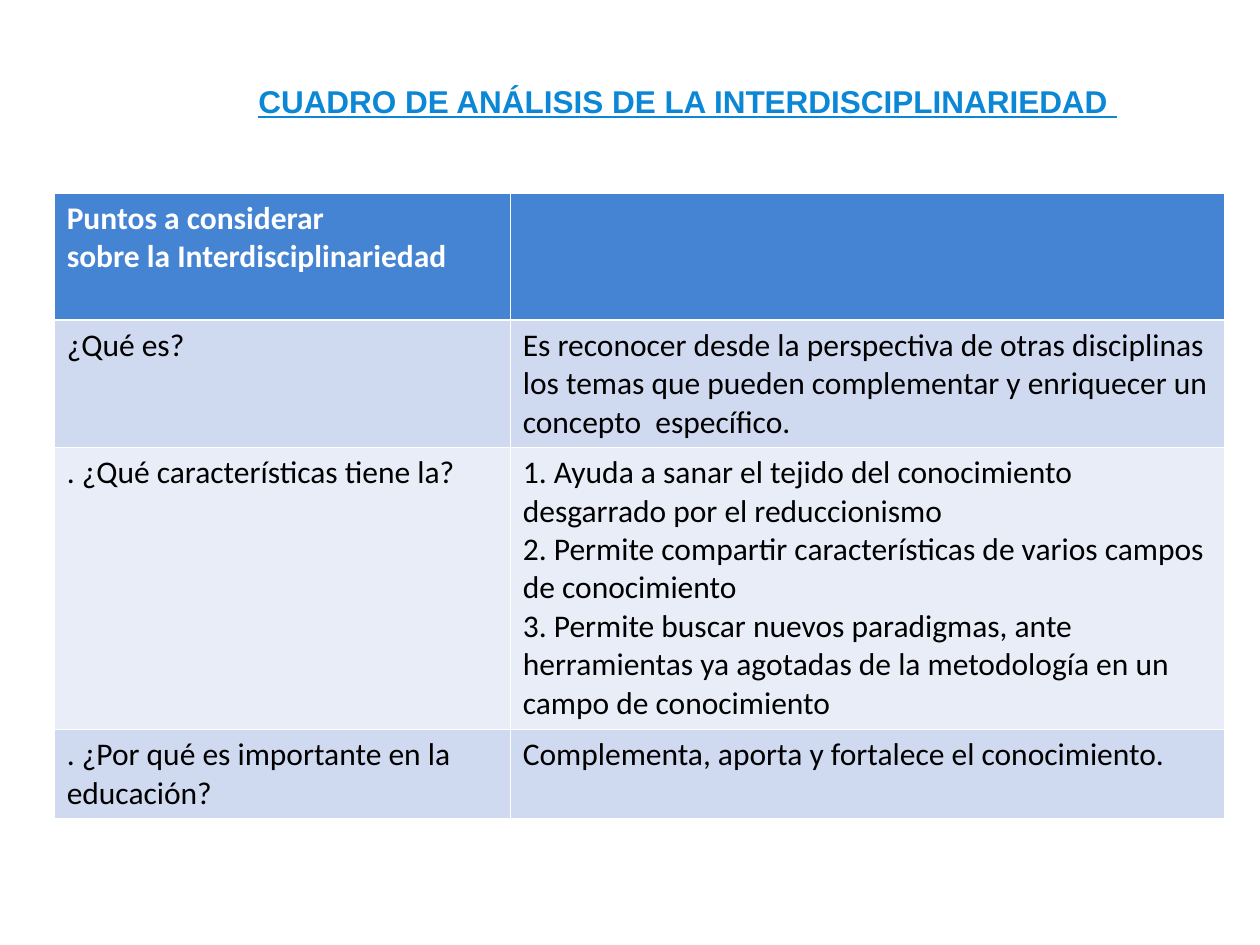
from dataclasses import dataclass

from pptx import Presentation
from pptx.dml.color import RGBColor
from pptx.enum.text import MSO_ANCHOR, MSO_AUTO_SIZE, PP_ALIGN
from pptx.util import Inches, Pt


@dataclass(frozen=True)
class Theme:
    heading: str = "0B87D6"
    header_fill: str = "4584D3"
    header_text: str = "FFFFFF"
    body_text: str = "000000"
    bands: tuple = ("CFD9EF", "E9EDF7")
    heading_font: str = "Arial"
    table_font: str = "Calibri"
    size: int = 18


THEME = Theme()

HEADING = "CUADRO DE ANÁLISIS DE LA INTERDISCIPLINARIEDAD "
ANALYSIS = [
    (["Puntos a considerar", "sobre la Interdisciplinariedad"], []),
    (["¿Qué es?"],
     ["Es reconocer desde la perspectiva de otras disciplinas los temas que "
      "pueden complementar y enriquecer un concepto  específico."]),
    ([". ¿Qué características tiene la?"],
     ["1. Ayuda a sanar el tejido del conocimiento  desgarrado por el reduccionismo",
      "2. Permite compartir características de varios campos de conocimiento",
      "3. Permite buscar nuevos paradigmas, ante herramientas ya agotadas de la "
      "metodología en un campo de conocimiento"]),
    ([". ¿Por qué es importante en la educación?"],
     ["Complementa, aporta y fortalece el conocimiento."]),
]
COLUMN_WIDTHS = (3.62, 5.67)
ROW_HEIGHTS = (1.01, 1.01, 2.24, 0.71)


def write(frame, lines, *, font, color, size=THEME.size, bold=False, underline=False):
    for index, line in enumerate(lines):
        paragraph = frame.paragraphs[0] if index == 0 else frame.add_paragraph()
        paragraph.alignment = PP_ALIGN.LEFT
        run = paragraph.add_run()
        run.text = line
        run.font.name = font
        run.font.size = Pt(size)
        run.font.bold = bold
        run.font.underline = underline
        run.font.color.rgb = RGBColor.from_string(color)


def place_heading(slide, left, top, width, height):
    heading = slide.shapes.title
    heading.left, heading.top = left, top
    heading.width, heading.height = width, height
    frame = heading.text_frame
    frame.word_wrap = False
    frame.auto_size = MSO_AUTO_SIZE.SHAPE_TO_FIT_TEXT
    frame.vertical_anchor = MSO_ANCHOR.TOP
    write(frame, [HEADING], font=THEME.heading_font, color=THEME.heading,
          bold=True, underline=True)


def place_analysis(slide, left, top, width, height):
    analysis = slide.shapes.add_table(
        len(ANALYSIS), len(COLUMN_WIDTHS), left, top, width, height).table
    for column, share in zip(analysis.columns, COLUMN_WIDTHS):
        column.width = int(width * share / sum(COLUMN_WIDTHS))
    for row, share in zip(analysis.rows, ROW_HEIGHTS):
        row.height = int(height * share / sum(ROW_HEIGHTS))
    for index, (row, entries) in enumerate(zip(analysis.rows, ANALYSIS)):
        is_header = index == 0
        fill = THEME.header_fill if is_header else THEME.bands[(index - 1) % 2]
        color = THEME.header_text if is_header else THEME.body_text
        for cell, lines in zip(row.cells, entries):
            cell.fill.solid()
            cell.fill.fore_color.rgb = RGBColor.from_string(fill)
            write(cell.text_frame, lines, font=THEME.table_font, color=color,
                  bold=is_header)


def main():
    deck = Presentation()
    deck.slide_width, deck.slide_height = Inches(10), Inches(7.5)
    slide = deck.slides.add_slide(deck.slide_layouts.get_by_name("Title Only"))
    place_analysis(slide, Inches(0.43), Inches(1.53),
                   Inches(sum(COLUMN_WIDTHS)), Inches(sum(ROW_HEIGHTS)))
    place_heading(slide, Inches(1.95), Inches(0.6), Inches(7.08), Inches(0.4))
    deck.save("out.pptx")


if __name__ == "__main__":
    main()
